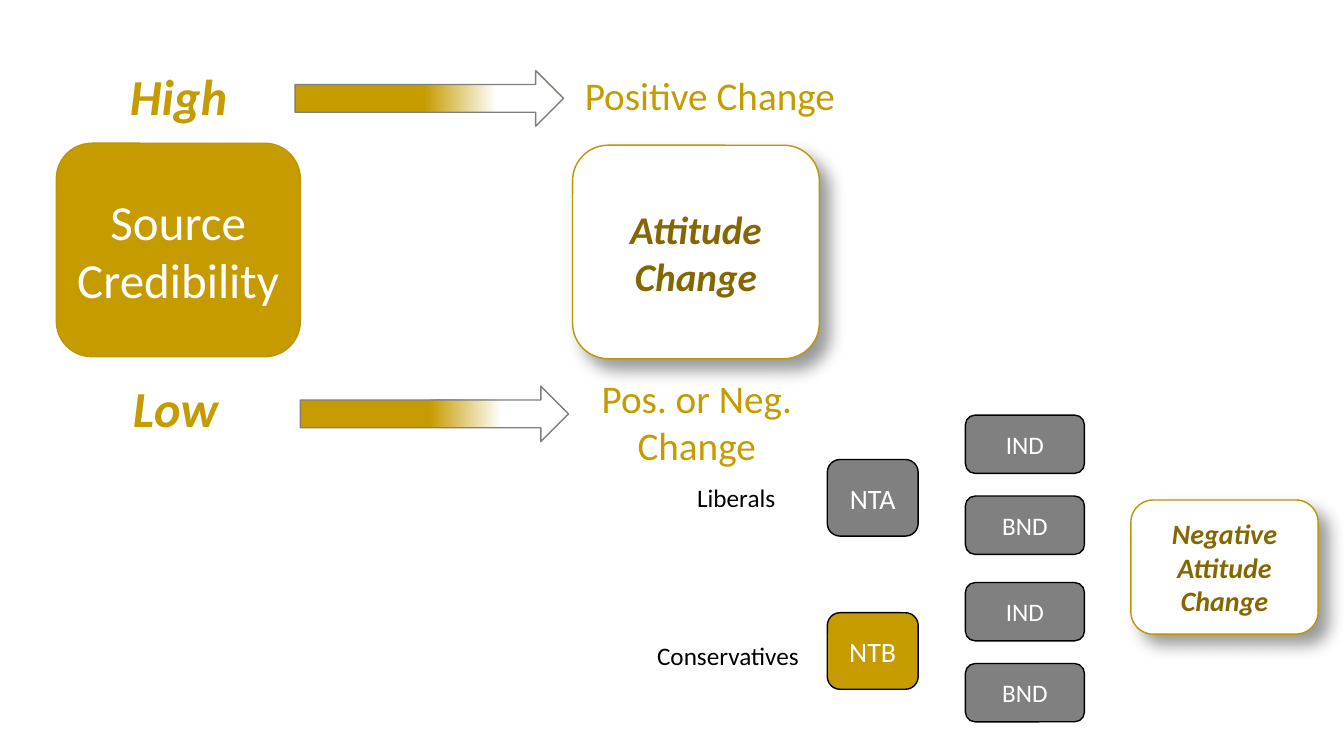
from lxml import etree
from pptx import Presentation
from pptx import util as u
from pptx.dml.color import RGBColor
from pptx.enum import shapes, text
from pptx.oxml.ns import qn

# Content: wording, left, top, width, height in cm, then style
BOXES = [
    (["Source", "Credibility"], 1.42, 3.61, 6.15, 5.38, "source"),
    (["Attitude Change"], 14.43, 3.66, 6.22, 5.38, "result"),
    (["Negative Attitude Change"], 28.5, 12.6, 4.72, 3.38, "outcome"),
    (["NTA"], 20.85, 11.58, 2.29, 1.93, "rival"),
    (["NTB"], 20.85, 15.44, 2.29, 1.93, "ally"),
]
TAGS = ["IND", "BND"]
LABELS = [
    ("High", 2.72, 1.52, 3.56, 1.8, "level", "CENTER"),
    ("Low", 3.1, 9.37, 2.79, 1.8, "level", "LEFT"),
    ("Positive Change", 14.17, 1.68, 7.44, 1.45, "effect", "CENTER"),
    ("Pos. or Neg. Change", 13.84, 9.3, 7.44, 2.64, "effect", "CENTER"),
    ("Liberals", 17.32, 12.04, 2.51, 1.02, "group", "LEFT"),
    ("Conservatives", 16.31, 16.0, 4.11, 1.02, "group", "LEFT"),
]
ARROWS = [(7.44, 1.78), (7.57, 9.73)]

GOLD, EDGE, DARK = "C59B00", "BD9506", "846700"
GRAY, WHITE, BLACK = "808080", "FFFFFF", "000000"
THEME = {
    "face": "Calibri",
    # size, text colour, bold italic
    "type": {
        "source": (35, WHITE, False), "result": (28, DARK, True),
        "outcome": (20, DARK, True), "rival": (20, WHITE, False),
        "ally": (20, WHITE, False), "tag": (18, WHITE, False),
        "level": (36, GOLD, True), "effect": (28, GOLD, False),
        "group": (18, BLACK, False),
    },
    # fill, line, shadow
    "box": {
        "source": (GOLD, EDGE, False), "result": (WHITE, EDGE, True),
        "outcome": (WHITE, EDGE, True), "rival": (GRAY, BLACK, False),
        "ally": (GOLD, BLACK, False), "tag": (GRAY, BLACK, False),
    },
    "fade": [(0.48, GOLD), (0.75, WHITE)],
}

deck = Presentation()
deck.slide_width, deck.slide_height = u.Cm(33.87), u.Cm(19.05)
slide = deck.slides.add_slide(deck.slide_layouts[6])


def tint(hue):
    return RGBColor.from_string(hue)


def write(frame, lines, style, align="CENTER"):
    size, hue, strong = THEME["type"][style]
    frame.text = "\n".join(lines)
    for para in frame.paragraphs:
        para.alignment = text.PP_ALIGN[align]
        font = para.font
        font.name, font.size = THEME["face"], u.Pt(size)
        font.color.rgb = tint(hue)
        font.bold = font.italic = strong


def draw(kind, place, edge):
    shape = slide.shapes.add_shape(kind, *map(u.Cm, place))
    shape.shadow.inherit = False
    shape.line.color.rgb = tint(edge)
    shape.line.width = u.Pt(1)
    return shape


def cast(shape):
    effects = shape._element.spPr.find(qn("a:effectLst"))
    drop = etree.SubElement(
        effects, qn("a:outerShdw"), blurRad=str(u.Pt(12)),
        dist=str(u.Pt(10)), dir="2700000", algn="tl", rotWithShape="0")
    hue = etree.SubElement(drop, qn("a:srgbClr"), val=BLACK)
    etree.SubElement(hue, qn("a:alpha"), val="40000")


def box(lines, *place, style):
    fill, edge, shade = THEME["box"][style]
    shape = draw(shapes.MSO_SHAPE.ROUNDED_RECTANGLE, place, edge)
    shape.fill.solid()
    shape.fill.fore_color.rgb = tint(fill)
    if shade:
        cast(shape)
    frame = shape.text_frame
    frame.margin_left = frame.margin_right = 0
    frame.vertical_anchor = text.MSO_ANCHOR.MIDDLE
    frame.word_wrap = True
    write(frame, lines, style)


# Labels
for words, *place, style, align in LABELS:
    frame = slide.shapes.add_textbox(*map(u.Cm, place)).text_frame
    frame.word_wrap = style != "group"
    frame.auto_size = text.MSO_AUTO_SIZE.SHAPE_TO_FIT_TEXT
    write(frame, [words], style, align)

# Fading arrows
for left, top in ARROWS:
    arrow = draw(shapes.MSO_SHAPE.RIGHT_ARROW, (left, top, 6.76, 1.4), GRAY)
    arrow.fill.gradient()
    arrow.fill.gradient_angle = 0
    for stop, (spot, hue) in zip(arrow.fill.gradient_stops, THEME["fade"]):
        stop.position = spot
        stop.color.rgb = tint(hue)

# Boxes
for lines, *place, style in BOXES:
    box(lines, *place, style=style)

# Tag pairs beside each network
for pair in range(2):
    for row, tag in enumerate(TAGS):
        top = 10.46 + 4.22 * pair + 2.04 * row
        box([tag], 24.33, top, 3, 1.47, style="tag")

deck.save("out.pptx")
